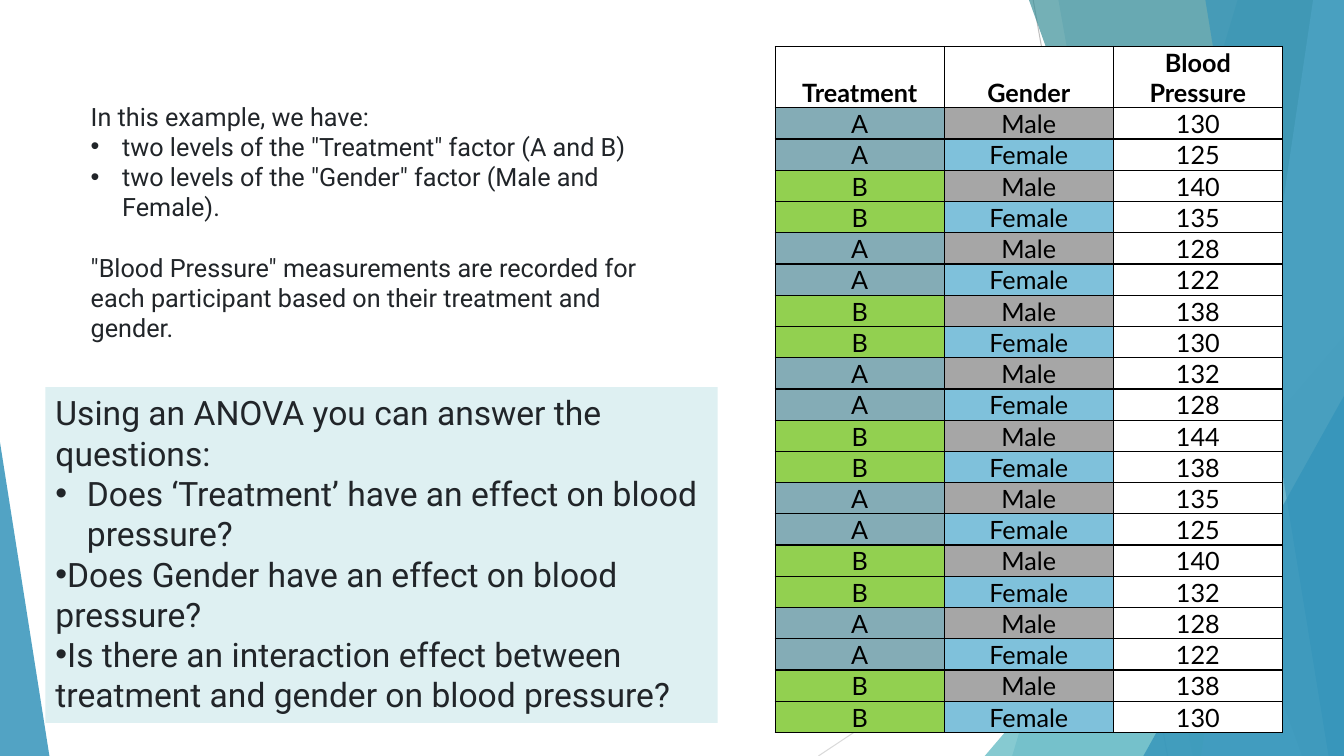
from pptx import Presentation
from pptx.dml.color import RGBColor
from pptx.enum.shapes import MSO_CONNECTOR, MSO_SHAPE
from pptx.enum.text import MSO_ANCHOR, MSO_AUTO_SIZE, PP_ALIGN
from pptx.oxml.ns import qn
from pptx.util import Pt
from lxml.etree import SubElement

COLORS = {
    "blue": "3494BA", "teal": "58B6C0", "deep_teal": "3A8F98", "sky": "7FC1DB",
    "slate": "84ACB6", "green": "92D050", "gray": "A6A6A6", "panel": "DEF0F2",
    "line_dark": "BFBFBF", "line_light": "D9D9D9",
    "white": "FFFFFF", "black": "000000", "ink": "212529",
}
RGB = {name: RGBColor.from_string(value) for name, value in COLORS.items()}
W, H = 960, 540

prs = Presentation()
prs.slide_width, prs.slide_height = Pt(W), Pt(H)
s = prs.slides.add_slide(prs.slide_layouts.get_by_name("Two Content"))
title, intro, questions = list(s.placeholders)[:3]
for sp in list(s.placeholders):
    if sp not in (intro, questions):
        sp.element.getparent().remove(sp.element)


def write(p, text, *, size, font, color, bold=False, align=PP_ALIGN.LEFT,
          bullet=None, indent=0, before=0):
    """Fill a paragraph with one formatted run; indent is a hanging indent in points."""
    p.alignment = align
    p.line_spacing = 1.0
    p.space_before, p.space_after = Pt(before), Pt(0)
    pPr = p._p.get_or_add_pPr()
    pPr.set("marL", str(Pt(indent)))
    pPr.set("indent", str(Pt(-indent)))
    if bullet:
        SubElement(pPr, qn("a:buFont"), typeface="Arial")
        SubElement(pPr, qn("a:buChar"), char=bullet)
    else:
        SubElement(pPr, qn("a:buNone"))
    r = p.add_run()
    r.text = text
    r.font.size, r.font.name, r.font.bold = Pt(size), font, bold
    r.font.color.rgb = RGB[color]


# Backdrop lines
for x1, y1, x2, y2, color in [(738, 0, 834, H, "line_dark"),
                              (W, 290, 584.6, H, "line_light")]:
    line = s.shapes.add_connector(MSO_CONNECTOR.STRAIGHT, Pt(x1), Pt(y1), Pt(x2), Pt(y2))
    line.line.color.rgb = RGB[color]
    line.line.width = Pt(0.75)
    SubElement(line._element.spPr, qn("a:effectLst"))

# Backdrop facets: bands give top-left and bottom-left x, triangles left, top, width, apex
facets = [
    ("band", (884.2, 722.9), "blue", 30),
    ("band", (756, 851.8), "blue", 20),
    ("triangle", (703.4, 240, 256.6, 1), "teal", 72),
    ("band", (735.1, 929.5), "deep_teal", 70),
    ("band", (938.2, 858.2), "sky", 70),
    ("band", (861.1, 949), "blue", 65),
    ("triangle", (816.7, 282.8, 143.3, 1), "blue", 80),
    ("triangle", (0, 316, 35.3, 0), "blue", 85),
]
for kind, geometry, color, opacity in facets:
    if kind == "band":
        top_x, bottom_x = geometry
        outline = s.shapes.build_freeform(top_x, 0, scale=Pt(1))
        outline.add_line_segments([(W, 0), (W, H), (bottom_x, H)])
        facet = outline.convert_to_shape()
    else:
        left, top, width, apex = geometry
        facet = s.shapes.add_shape(MSO_SHAPE.ISOSCELES_TRIANGLE,
                                   Pt(left), Pt(top), Pt(width), Pt(H - top))
        facet.adjustments[0] = apex
    facet.shadow.inherit = False
    facet.line.fill.background()
    facet.fill.solid()
    facet.fill.fore_color.rgb = RGB[color]
    srgb = facet._element.spPr.find(qn("a:solidFill")).find(qn("a:srgbClr"))
    SubElement(srgb, qn("a:alpha"), val=str(opacity * 1000))

# Blood pressure table
pressures = [130, 125, 140, 135, 128, 122, 138, 130, 132, 128,
             144, 138, 135, 125, 140, 132, 128, 122, 138, 130]
rows = [("Treatment", "Gender", "Blood Pressure")]
rows += [("AABB"[i % 4], ("Male", "Female")[i % 2], str(value))
         for i, value in enumerate(pressures)]
level_fill = {"A": "slate", "B": "green", "Male": "gray", "Female": "sky"}
COL_W, HEAD_H, ROW_H = 120.8, 43.9, 22.18

frame = s.shapes.add_table(len(rows), 3, Pt(553.7), Pt(33.1), Pt(3 * COL_W),
                           Pt(HEAD_H + ROW_H * len(pressures)))
table = frame.table
table.first_row = table.horz_banding = False
for column in table.columns:
    column.width = Pt(COL_W)
for i, row in enumerate(rows):
    table.rows[i].height = Pt(ROW_H if i else HEAD_H)
    for j, text in enumerate(row):
        cell = table.cell(i, j)
        cell.margin_left = cell.margin_right = cell.margin_top = Pt(0.7)
        cell.margin_bottom = 0
        cell.vertical_anchor = MSO_ANCHOR.BOTTOM
        tcPr = cell._tc.get_or_add_tcPr()
        for side in ("a:lnL", "a:lnR", "a:lnT", "a:lnB"):
            border = SubElement(tcPr, qn(side), w=str(Pt(1)))
            SubElement(SubElement(border, qn("a:solidFill")), qn("a:srgbClr"),
                       val=COLORS["black"])
        cell.fill.solid()
        cell.fill.fore_color.rgb = RGB[level_fill.get(text, "white")]
        write(cell.text_frame.paragraphs[0], text, size=18, font="Lato",
              color="black", bold=i == 0, align=PP_ALIGN.CENTER)

# Text blocks
hanging = dict(bullet="•", indent=22.5)
flush = dict(bullet="•")
blocks = [
    (intro, (57.6, 68.4, 406, 181.4), 18, [
        ("In this example, we have:", {}),
        ('two levels of the "Treatment" factor (A and B)', hanging),
        ('two levels of the "Gender" factor (Male and Female).', hanging),
        ('"Blood Pressure" measurements are recorded for each participant '
         "based on their treatment and gender.", dict(before=21.5)),
    ]),
    (questions, (32.4, 276.5, 480.2, 239.8), 24, [
        ("Using an ANOVA you can answer the questions:", {}),
        ("Does ‘Treatment’ have an effect on blood pressure?", hanging),
        ("Does Gender have an effect on blood pressure?", flush),
        ("Is there an interaction effect between treatment and gender "
         "on blood pressure?", flush),
    ]),
]
for sp, box, size, paragraphs in blocks:
    sp.left, sp.top, sp.width, sp.height = map(Pt, box)
    sp.element.getparent().append(sp.element)  # bring in front of the facets
    tf = sp.text_frame
    tf.word_wrap = True
    tf.auto_size = MSO_AUTO_SIZE.NONE
    tf.vertical_anchor = MSO_ANCHOR.TOP
    for i, (text, style) in enumerate(paragraphs):
        p = tf.add_paragraph() if i else tf.paragraphs[0]
        write(p, text, size=size, font="Roboto", color="ink", **style)
questions.fill.solid()
questions.fill.fore_color.rgb = RGB["panel"]

prs.save("out.pptx")
